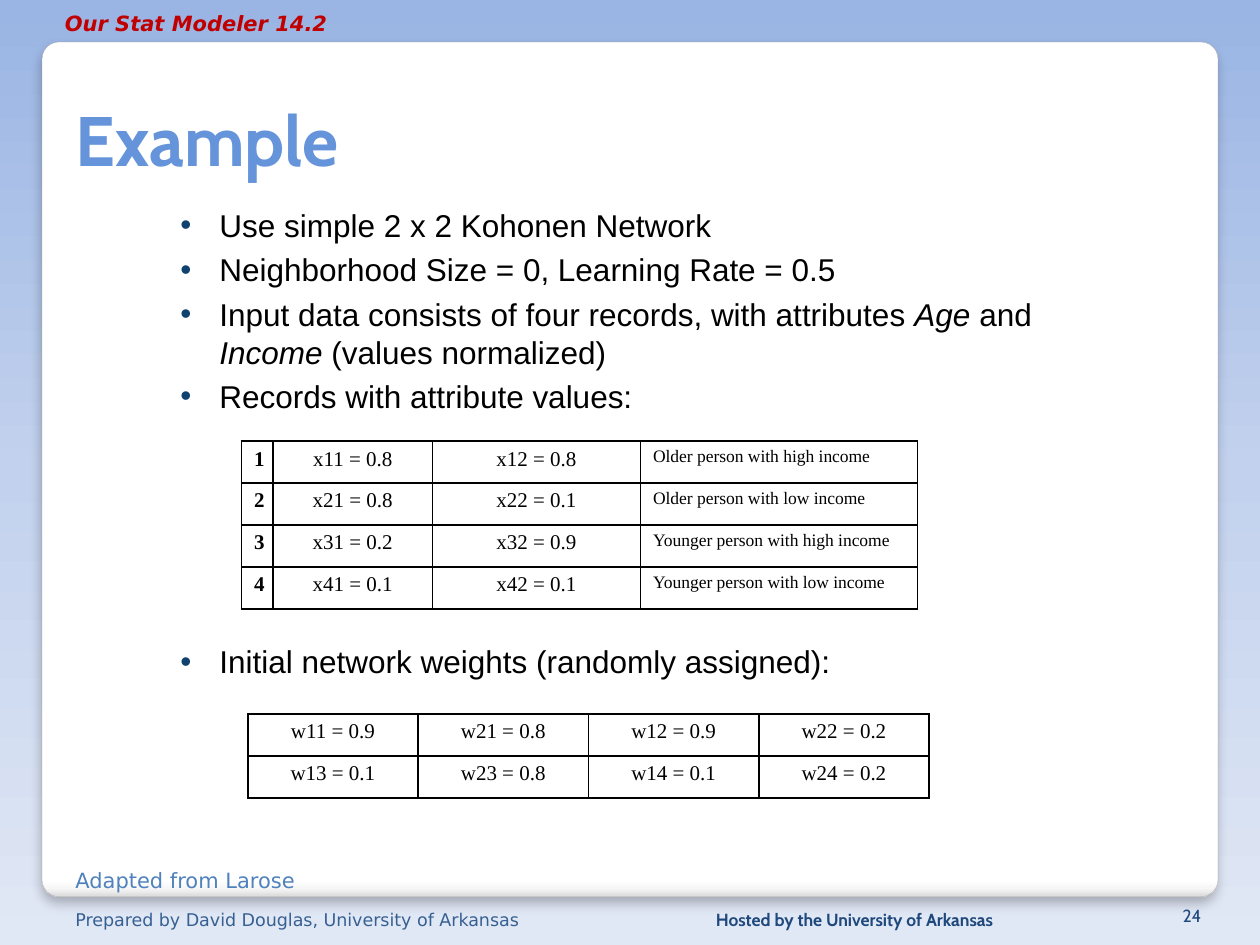
from collections import namedtuple
from lxml import etree
from pptx import Presentation
from pptx.dml.color import RGBColor
from pptx.enum.shapes import MSO_SHAPE
from pptx.enum.text import MSO_ANCHOR, PP_ALIGN
from pptx.oxml.ns import qn
from pptx.util import Inches, Pt

ROUND = MSO_SHAPE.ROUNDED_RECTANGLE
TOP, BOTTOM = MSO_ANCHOR.TOP, MSO_ANCHOR.BOTTOM
LEFT, MID, RIGHT = PP_ALIGN.LEFT, PP_ALIGN.CENTER, PP_ALIGN.RIGHT

UNIT = Inches(1 / 12)  # the slide is a grid of 120 columns by 90 rows
Box = namedtuple("Box", "x y w h")
Font = namedtuple("Font", "name size color bold italic", defaults=(False, False))


class Theme:
    sky = [(0, "9AB5E4"), (50, "C2D1ED"), (100, "E1E8F5")]
    card = [(0, "FFFFFF"), (98, "FFFFFF"), (99, "F7F7F7"), (100, "DADADA")]
    edge, rule, dot = "A4A4A4", "000000", "104270"
    tool = Font("DejaVu Sans", 12, "C00000", True, True)
    title = Font("Cabin", 40, "6594DA", True)
    body = Font("Arial", 18, "000000")
    cell = Font("Times New Roman", 12, "000000")
    key = cell._replace(bold=True)
    note = cell._replace(size=10)
    credit = Font("DejaVu Sans", 12, "4F81BD")
    author = Font("DejaVu Sans", 10, "376092")
    page = Font("Cabin", 10, "1F497D")
    host = page._replace(bold=True)


def part(box, x, y, w, h):
    """Box placed inside another one, in grid units."""
    return Box(box.x + x, box.y + y, w, h)


def emu(box):
    return [round(n * UNIT) for n in box]


def node(parent, tag, **attrs):
    item = etree.SubElement(parent, qn(tag))
    for name, value in attrs.items():
        item.set(name, str(value))
    return item


def style(run, font):
    face = run.font
    face.name, face.size = font.name, Pt(font.size)
    face.bold, face.italic = font.bold, font.italic
    face.color.rgb = RGBColor.from_string(font.color)


def shade(fill, root, stops):
    """Fill from top to bottom through any number of stops."""
    fill.gradient()
    fill.gradient_angle = 270
    band = root.find(".//" + qn("a:gsLst"))
    for old in list(band):
        band.remove(old)
    for pos, color in stops:
        node(node(band, "a:gs", pos=pos * 1000), "a:srgbClr", val=color)


def label(slide, box, text, font, align=LEFT, anchor=TOP, wrap=True):
    frame = slide.shapes.add_textbox(*emu(box)).text_frame
    frame.word_wrap, frame.vertical_anchor = wrap, anchor
    frame.text = text
    para = frame.paragraphs[0]
    para.alignment = align
    style(para.runs[0], font)
    return para


def panel(slide, box):
    card = slide.shapes.add_shape(ROUND, *emu(box))
    card.adjustments[0] = 0.02
    shade(card.fill, card.element, Theme.card)
    card.line.color.rgb = RGBColor.from_string(Theme.edge)
    card.line.width = Pt(0.16)
    # soft shadow below the card
    card.shadow.inherit = False
    effects = card.element.spPr.find(qn("a:effectLst"))
    glow = node(effects, "a:outerShdw", blurRad=Pt(6), dist=Pt(4),
                dir=5400000, algn="t", rotWithShape=0)
    node(node(glow, "a:srgbClr", val="000000"), "a:alpha", val=25000)


def header(slide, box):
    label(slide, part(box, 5, 0.4, 29, 3.6), "Our Stat Modeler 14.2", Theme.tool, wrap=False)
    label(slide, part(box, 6, 4, 107.4, 13.8), "Example", Theme.title, anchor=BOTTOM)


def bullets(slide, box, items):
    """Items are (gap before in points, text); *stars* mark italics."""
    frame = slide.shapes.add_textbox(*emu(box)).text_frame
    frame.word_wrap = True
    frame.text = "\n".join(text.replace("*", "") for _, text in items)
    for para, (gap, text) in zip(frame.paragraphs, items):
        para.space_before, para.line_spacing = Pt(gap), Pt(21.7)
        props = para._p.get_or_add_pPr()
        props.set("marL", str(Inches(0.81)))
        props.set("indent", str(Inches(-0.31)))
        node(node(props, "a:buClr"), "a:srgbClr", val=Theme.dot)
        node(props, "a:buFont", typeface="Arial")
        node(props, "a:buChar", char="•")
        para.text = ""
        for i, piece in enumerate(text.split("*")):
            run = para.add_run()
            run.text = piece
            style(run, Theme.body._replace(italic=i % 2 == 1))


def border(cell):
    props = cell._tc.get_or_add_tcPr()
    for i, side in enumerate("LRTB"):
        line = node(props, "a:ln" + side, w=Pt(1))
        node(node(line, "a:solidFill"), "a:srgbClr", val=Theme.rule)
        props.insert(i, line)


def table(slide, box, rows, cols, looks):
    """Cols are widths in grid units; looks give font and alignment by column."""
    grid = slide.shapes.add_table(len(rows), len(cols), *emu(box)).table
    grid.first_row = grid.horz_banding = False
    for col, width in zip(grid.columns, cols):
        col.width = round(width * UNIT)
    for r, row in enumerate(rows):
        for c, (text, (font, align)) in enumerate(zip(row, looks)):
            cell = grid.cell(r, c)
            cell.fill.background()
            border(cell)
            cell.text_frame.text = text
            para = cell.text_frame.paragraphs[0]
            para.alignment = align
            style(para.runs[0], font)


def body(slide, box):
    bullets(slide, box, [
        (3.6, "Use simple 2 x 2 Kohonen Network"),
        (3.6, "Neighborhood Size = 0, Learning Rate = 0.5"),
        (3.6, "Input data consists of four records, with attributes "
              "*Age* and *Income* (values normalized)"),
        (3.6, "Records with attribute values:"),
        (130, "Initial network weights (randomly assigned):"),
    ])
    # records
    data = [("0.8", "0.8", "Older person with high income"),
            ("0.8", "0.1", "Older person with low income"),
            ("0.2", "0.9", "Younger person with high income"),
            ("0.1", "0.1", "Younger person with low income")]
    rows = [(f"{n}", f"x{n}1 = {age}", f"x{n}2 = {pay}", note)
            for n, (age, pay, note) in enumerate(data, 1)]
    table(slide, part(box, 13, 23, 64.4, 16), rows, [3, 15.2, 19.8, 26.4],
          [(Theme.key, LEFT), (Theme.cell, MID), (Theme.cell, MID), (Theme.note, LEFT)])
    # weights
    rows = [("w11 = 0.9", "w21 = 0.8", "w12 = 0.9", "w22 = 0.2"),
            ("w13 = 0.1", "w23 = 0.8", "w14 = 0.1", "w24 = 0.2")]
    table(slide, part(box, 13.6, 49, 64.9, 8), rows, [64.9 / 4] * 4,
          [(Theme.cell, MID)] * 4)


def footer(slide, box):
    credit = label(slide, part(box, 6, 0, 34, 3.6), "Adapted from Larose", Theme.credit)
    credit.space_before = Pt(6)
    label(slide, part(box, 6, 4, 53.5, 2.8),
          "Prepared by David Douglas, University of Arkansas", Theme.author)
    label(slide, part(box, 67, 4, 41, 2.8), "Hosted by the University of Arkansas", Theme.host)
    label(slide, part(box, 109.6, 4, 6, 2.8), "24", Theme.page, RIGHT, BOTTOM)


def main():
    deck = Presentation()
    deck.slide_width, deck.slide_height = Inches(10), Inches(7.5)
    slide = deck.slides.add_slide(deck.slide_layouts[6])
    shade(slide.background.fill, slide.element, Theme.sky)
    panel(slide, Box(4, 4, 112, 81.4))
    header(slide, Box(0, 0, 120, 18))
    body(slide, Box(10, 19, 95, 62))
    footer(slide, Box(0, 82, 120, 8))
    deck.save("out.pptx")


if __name__ == "__main__":
    main()
